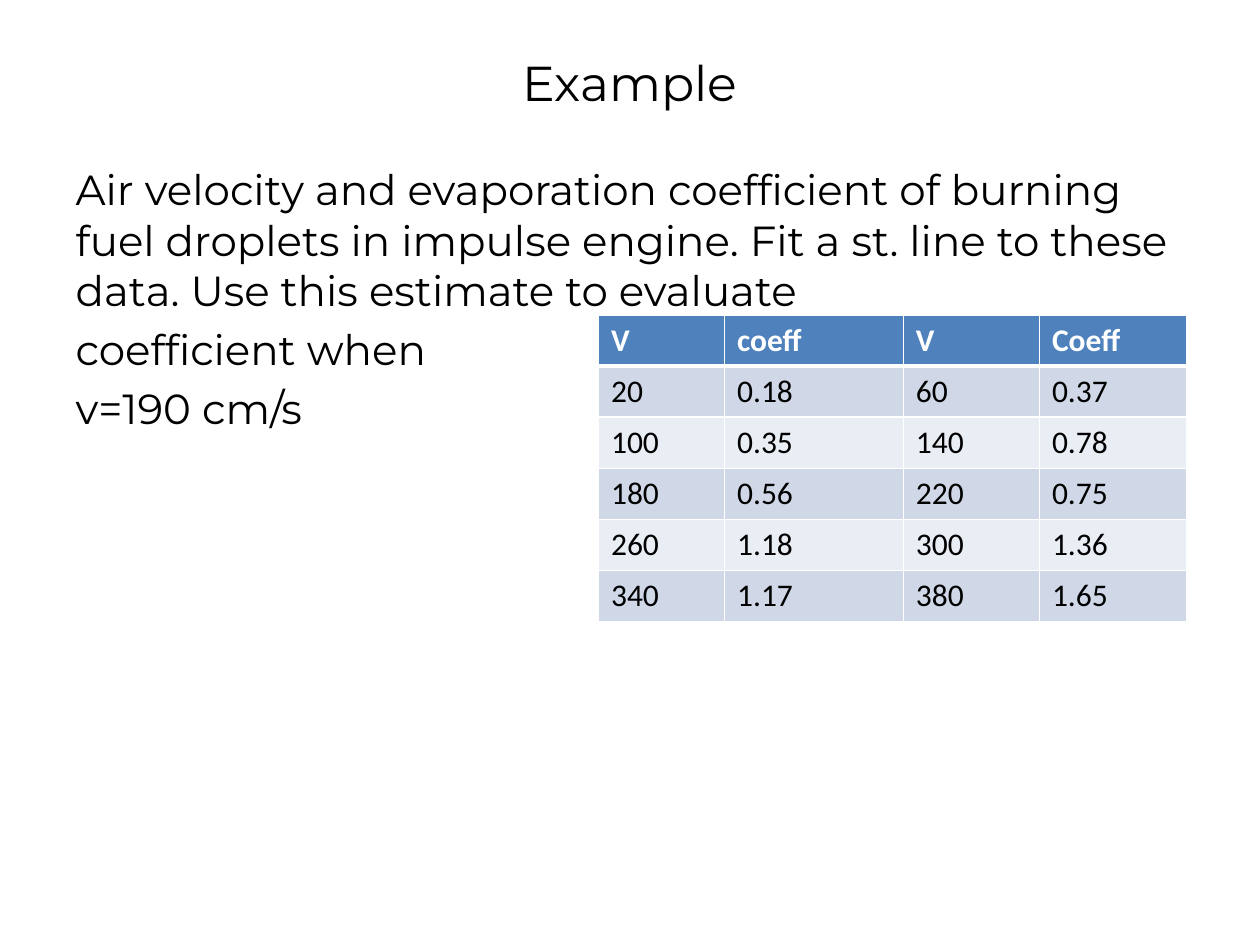
"""Build the example slide on air velocity and evaporation coefficient."""
from lxml.etree import SubElement
from pptx import Presentation
from pptx.dml.color import RGBColor
from pptx.enum.text import MSO_ANCHOR, PP_ALIGN
from pptx.oxml import parse_xml
from pptx.oxml.ns import nsdecls, qn
from pptx.util import Inches, Pt

BLACK = RGBColor(0x00, 0x00, 0x00)
WHITE = RGBColor(0xFF, 0xFF, 0xFF)
BLUE = RGBColor(0x4F, 0x81, 0xBD)
BANDS = (RGBColor(0xE9, 0xED, 0xF4), RGBColor(0xD0, 0xD8, 0xE8))

MARGIN = 0.05
COLUMN_WIDTHS = (1, 1.42, 1.08, 1.17)
ROW_HEIGHT = 0.405
STATEMENT = (
    "Air velocity and evaporation coefficient of burning fuel droplets in "
    "impulse engine. Fit a st. line to these data. Use this estimate to evaluate",
    "coefficient when",
    "v=190 cm/s",
)
DATA = (
    ("V", "coeff", "V", "Coeff"),
    ("20", "0.18", "60", "0.37"),
    ("100", "0.35", "140", "0.78"),
    ("180", "0.56", "220", "0.75"),
    ("260", "1.18", "300", "1.36"),
    ("340", "1.17", "380", "1.65"),
)


def write(p, text, size=24, font="Montserrat", color=BLACK, bold=False, align=None):
    """Add a formatted run to a paragraph."""
    p.alignment = align
    r = p.add_run()
    r.text = text
    r.font.size, r.font.name, r.font.bold = Pt(size), font, bold
    r.font.color.rgb = color


def place(sp, prs, left, top, width, height):
    """Position a shape by shares of the slide's size."""
    sp.left, sp.width = int(prs.slide_width * left), int(prs.slide_width * width)
    sp.top, sp.height = int(prs.slide_height * top), int(prs.slide_height * height)


def remove_bullet(p):
    """Set a paragraph flush left without a bullet."""
    pPr = p._p.get_or_add_pPr()
    pPr.set("marL", "0")
    pPr.set("indent", "0")
    SubElement(pPr, qn("a:buNone"))


def add_title(s, prs, text):
    """Fill the title placeholder."""
    sp = s.shapes.title
    place(sp, prs, MARGIN, 0.04, 1 - 2 * MARGIN, 0.093)
    sp.text_frame.vertical_anchor = MSO_ANCHOR.MIDDLE
    write(sp.text_frame.paragraphs[0], text, size=28, align=PP_ALIGN.CENTER)


def add_body(s, prs, lines):
    """Fill the body placeholder with unbulleted paragraphs."""
    sp = s.placeholders[1]
    place(sp, prs, MARGIN, 1 / 6, 1 - 2 * MARGIN, 0.727)
    tf = sp.text_frame
    for i, line in enumerate(lines):
        p = tf.add_paragraph() if i else tf.paragraphs[0]
        remove_bullet(p)
        write(p, line)


def set_borders(cell, **widths):
    """Draw white cell borders with widths in points by side."""
    tcPr = cell._tc.get_or_add_tcPr()
    for i, side in enumerate("LRTB"):
        tcPr.insert(i, parse_xml(
            f'<a:ln{side} {nsdecls("a")} w="{Pt(widths.get(side, 1))}"><a:solidFill>'
            f'<a:srgbClr val="{WHITE}"/></a:solidFill></a:ln{side}>'))


def add_data_table(s, rows):
    """Add the banded table of measurements."""
    table = s.shapes.add_table(
        len(rows), len(COLUMN_WIDTHS), Inches(4.75), Inches(2.5),
        Inches(sum(COLUMN_WIDTHS)), Inches(ROW_HEIGHT * len(rows))).table
    for column, width in zip(table.columns, COLUMN_WIDTHS):
        column.width = Inches(width)
    for i, row in enumerate(rows):
        header = i == 0
        for j, value in enumerate(row):
            cell = table.cell(i, j)
            cell.fill.solid()
            cell.fill.fore_color.rgb = BLUE if header else BANDS[i % 2]
            set_borders(cell, T=3 if i == 1 else 1, B=3 if header else 1)
            write(cell.text_frame.paragraphs[0], value, size=18, font="Calibri",
                  color=WHITE if header else BLACK, bold=header)


def main():
    """Build and save the slide."""
    prs = Presentation()
    prs.slide_width, prs.slide_height = Inches(10), Inches(7.5)
    s = prs.slides.add_slide(prs.slide_layouts[1])
    add_title(s, prs, "Example")
    add_body(s, prs, STATEMENT)
    add_data_table(s, DATA)
    prs.save("out.pptx")


if __name__ == "__main__":
    main()
